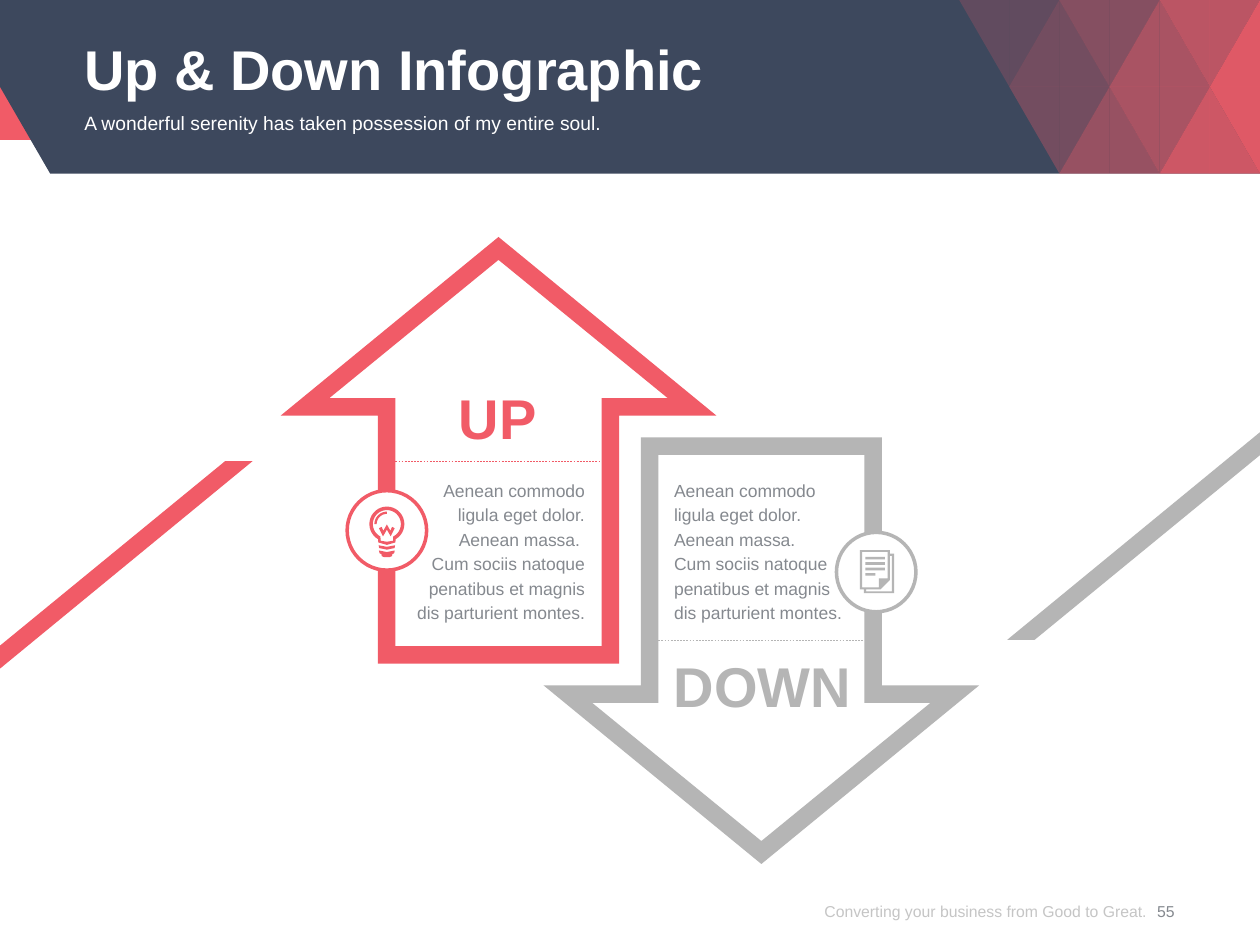
from math import cos, radians, sin

from lxml import etree
from pptx import Presentation
from pptx.dml.color import RGBColor
from pptx.enum.dml import MSO_LINE
from pptx.enum.shapes import MSO_CONNECTOR, MSO_SHAPE
from pptx.enum.text import MSO_ANCHOR, PP_ALIGN
from pptx.oxml.ns import qn
from pptx.util import Pt

LEFT, CENTER, RIGHT = PP_ALIGN.LEFT, PP_ALIGN.CENTER, PP_ALIGN.RIGHT
TOP, MIDDLE = MSO_ANCHOR.TOP, MSO_ANCHOR.MIDDLE
RECTANGLE, OVAL = MSO_SHAPE.RECTANGLE, MSO_SHAPE.OVAL
STRAIGHT, DASH = MSO_CONNECTOR.STRAIGHT, MSO_LINE.DASH

THEME = {
    "font": "Arial",
    "coral": "F15B67", "navy": "3D485D", "silver": "B5B5B5", "white": "FFFFFF",
    "body": "85898F", "footer": "8C8C8C",
    "heading_size": 32, "subtitle_size": 11, "body_size": 10, "footer_size": 9,
}

# Content
TITLE = "Up & Down Infographic"
SUBTITLE = "A wonderful serenity has taken possession of my entire soul."
FOOTER = "Converting your business from Good to Great."
PAGE_NUMBER = "55"
CLOSING = "Cum sociis natoque penatibus et magnis dis parturient montes."
UP = {
    "label": "UP", "label_box": (234.7, 218.9, 99.4, 38.9),
    "body": ["Aenean commodo ligula eget dolor. Aenean massa. ", CLOSING],
    "body_box": (234.7, 272.2, 99.4, 85), "align": RIGHT,
    "color": THEME["coral"], "badge": (221.1, 303.1),
}
DOWN = {
    "label": "DOWN", "label_box": (380.2, 372.2, 110.9, 38.9),
    "body": ["Aenean commodo ligula eget dolor. Aenean massa.", CLOSING],
    "body_box": (385.2, 272.2, 99.4, 85), "align": LEFT,
    "color": THEME["silver"], "badge": (500.7, 326.9),
}

# Slide geometry; the down half is the up half turned about the pivot
WIDTH, HEIGHT = 720, 540
HEADER_HEIGHT = 99.2
PIVOT = (360, 314.55)
ARROW_X = 284.9
ARROW_OUTER = [(0, 135.4), (124.5, 237.5), (68.9, 237.5), (68.9, 379.2)]
ARROW_INNER = [(0, 148.5), (96.7, 227.5), (58.9, 227.5), (58.9, 369.2)]
STRIPE = [(144.4, 263.5), (0, 382.1), (0, 369), (128.7, 263.5)]
DIVIDER = [(226, 263.5), (343.8, 263.5)]
BADGE_SIZE, BADGE_LINE = 45.4, 2

# Header triangles: apex column and opacity above, beside and below it
TRIANGLE_WIDTH, TRIANGLE_COLUMNS = 28.65, 6
TRIANGLE_OPACITY = [(1, 20, 30, None), (3, 40, 60, 50), (5, 70, 90, 80)]


def arc(radius, start, end, cy=-3.6, steps=30):
    angles = [radians(start + (end - start) * i / steps) for i in range(steps + 1)]
    return [(radius * cos(a), cy + radius * sin(a)) for a in angles]


def mirrored(half):
    return half + [(-x, y) for x, y in reversed(half)]


def box(left, top, right, bottom):
    return [(left, top), (right, top), (right, bottom), (left, bottom)]


# Icon contours, measured from the centre of the badge
BULB = [
    arc(10, 120, 420) + mirrored([(4.9, 6.9), (0, 8.3)]),
    arc(8, 117, 423) + mirrored([(3.6, 5.9), (0, 6.5)]),
    arc(7.1, 180, 270) + arc(5.8, 270, 180),
    mirrored([(0, -3.4), (2, 0.2), (3, -2), (4.5, -1.2), (2.2, 3.4), (0, -0.4)]),
    mirrored([(0, 9.4), (4.7, 8.5), (4.4, 10.1), (0, 11)]),
    mirrored([(0, 12.4), (4.5, 11.5), (4.2, 13), (3, 13.7), (3, 14.7), (1.5, 15.3)]),
]
DOCUMENT = [
    [(7.8, -10.6), (7.8, -12.6), (-9.3, -12.6), (-9.3, 9.9),
     (-7, 9.9), (-7, 12.1), (10.2, 12.1), (10.2, -10.6)],
    [(-8.1, 8.7), (-8.1, -11.5), (6.5, -11.5), (6.5, 3.6), (1.6, 3.6), (1.6, 8.7)],
    [(9, 11), (-5.8, 11), (-5.8, 9.9), (2.5, 9.9), (7.8, 4.6), (7.8, -9.3), (9, -9.3)],
] + [box(-6.2, -8.7 + 3.1 * i, right, -7.2 + 3.1 * i)
     for i, right in enumerate([5, 5, 5, -0.5])]

deck = Presentation()
deck.slide_width, deck.slide_height = Pt(WIDTH), Pt(HEIGHT)
slide = deck.slides.add_slide(deck.slide_layouts[6])
shapes = slide.shapes


def paint(fill, color, opacity=100):
    fill.solid()
    fill.fore_color.rgb = RGBColor.from_string(color)
    if opacity < 100:
        for srgb in fill._xPr.iter(qn("a:srgbClr")):
            etree.SubElement(srgb, qn("a:alpha"), val=str(opacity * 1000))


def finish(shape, color, opacity=100):
    shape.shadow.inherit = False
    shape.line.fill.background()
    paint(shape.fill, color, opacity)
    return shape


def outline(contours, color, opacity=100):
    paths = [[(Pt(x), Pt(y)) for x, y in contour] for contour in contours]
    builder = shapes.build_freeform(*paths[0][0])
    for i, path in enumerate(paths):
        if i:
            builder.move_to(*path[0])
        builder.add_line_segments(path[1:], close=True)
    return finish(builder.convert_to_shape(), color, opacity)


def preset(kind, bounds, color):
    return finish(shapes.add_shape(kind, *map(Pt, bounds)), color)


def text(paragraphs, bounds, size, color, bold=False, align=LEFT,
         anchor=TOP, spacing=None, opacity=100):
    frame = shapes.add_textbox(*map(Pt, bounds)).text_frame
    frame.word_wrap = True
    frame.vertical_anchor = anchor
    frame.margin_left = frame.margin_right = frame.margin_top = frame.margin_bottom = 0
    for i, line in enumerate(paragraphs):
        paragraph = frame.add_paragraph() if i else frame.paragraphs[0]
        paragraph.alignment = align
        if spacing:
            paragraph.line_spacing = Pt(spacing)
        run = paragraph.add_run()
        run.text = line
        run.font.name, run.font.size, run.font.bold = THEME["font"], Pt(size), bold
        paint(run.font.fill, color, opacity)


def turn(points):
    return [(2 * PIVOT[0] - x, 2 * PIVOT[1] - y) for x, y in points]


def keep(points):
    return points


def direction(part, place, icon):
    color, (cx, cy) = part["color"], part["badge"]
    # Arrow and stripe
    outline([place([(ARROW_X + x, y) for x, y in mirrored(half)])
             for half in (ARROW_OUTER, ARROW_INNER)], color)
    outline([place(STRIPE)], color)
    # Divider
    (x1, y1), (x2, y2) = sorted(place(DIVIDER))
    divider = shapes.add_connector(STRAIGHT, Pt(x1), Pt(y1), Pt(x2), Pt(y2))
    paint(divider.line.fill, color)
    divider.line.width, divider.line.dash_style = Pt(0.25), DASH
    etree.SubElement(divider._element.spPr, qn("a:effectLst"))
    # Badge and icon
    radius = BADGE_SIZE / 2
    badge = preset(OVAL, (cx - radius, cy - radius, BADGE_SIZE, BADGE_SIZE), THEME["white"])
    paint(badge.line.fill, color)
    badge.line.width = Pt(BADGE_LINE)
    outline([[(cx + x, cy + y) for x, y in contour] for contour in icon], color)
    # Wording
    text(part["body"], part["body_box"], THEME["body_size"], THEME["body"],
         align=part["align"], spacing=14)
    text([part["label"]], part["label_box"], THEME["heading_size"], color,
         bold=True, align=CENTER)


# Header band
middle = HEADER_HEIGHT / 2
preset(RECTANGLE, (0, 0, WIDTH, 80), THEME["coral"])
outline([[(0, 0), (WIDTH, 0), (WIDTH, HEADER_HEIGHT), (28.7, HEADER_HEIGHT), (0, middle)]],
        THEME["navy"])

# Header triangles
triangles = []
for apex, above, beside, below in TRIANGLE_OPACITY:
    for step in (-1, 1):
        for row, opacity in ((0, above), (2, below)):
            if opacity:
                triangles.append(([(apex, 1), (apex, row), (apex + step, row)], opacity))
            if apex + 1 + step <= TRIANGLE_COLUMNS:
                triangles.append(([(apex + 1, 1), (apex + 1 + step, 1), (apex + 1, row)], beside))
for corners, opacity in triangles:
    outline([[(WIDTH - (TRIANGLE_COLUMNS - column) * TRIANGLE_WIDTH, row * middle)
              for column, row in corners]], THEME["coral"], opacity)

# Header and footer wording
text([TITLE], (48.2, 13.7, 623.5, 46.8), THEME["heading_size"], THEME["white"],
     bold=True, anchor=MIDDLE, spacing=42)
text([SUBTITLE], (48.2, 63.4, 623.5, 28), THEME["subtitle_size"], THEME["white"])
text([FOOTER], (434.9, 501.1, 220.3, 38.9), THEME["footer_size"], THEME["footer"],
     align=RIGHT, anchor=MIDDLE, opacity=50)
text([PAGE_NUMBER], (649.4, 501.1, 33.8, 38.9), THEME["footer_size"], THEME["body"],
     align=CENTER, anchor=MIDDLE)

direction(DOWN, turn, DOCUMENT)
direction(UP, keep, BULB)

deck.save("out.pptx")
